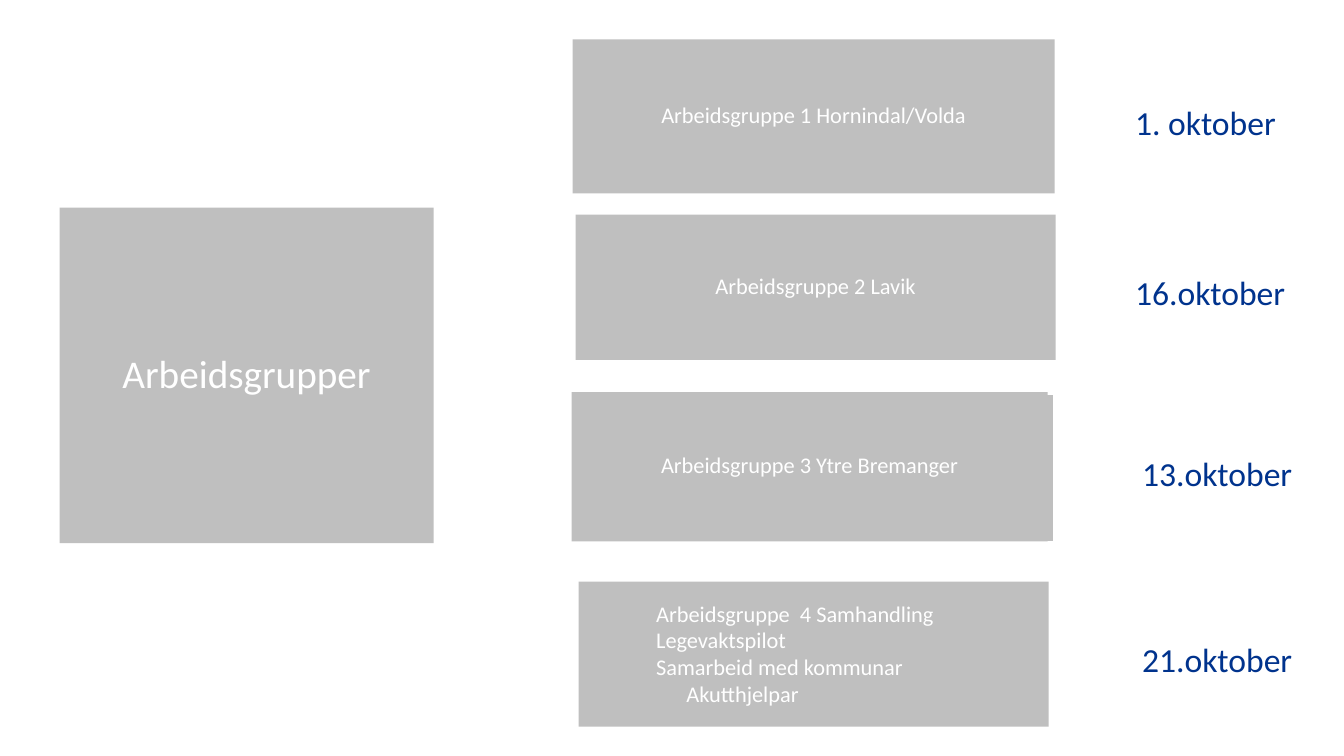
from dataclasses import dataclass

from pptx import Presentation, util as u
from pptx.enum import shapes, text
from pptx.dml.color import RGBColor

PX = 9144  # EMU in one px, 100 px to the inch
FONT = "Calibri"
COLORS = {"panel": "BFBFBF", "white": "FFFFFF", "date": "00338D"}


@dataclass(frozen=True)
class Box:
    left: int
    top: int
    width: int
    height: int

    def emu(self) -> tuple[int, ...]:
        return tuple(v * PX for v in (self.left, self.top, self.width, self.height))


@dataclass(frozen=True)
class Card:
    frame: Box
    label: str = ""
    shift: tuple[int, int] = (0, 0)  # offset of the labelled face from its frame


@dataclass(frozen=True)
class Date:
    box: Box
    label: str
    wrap: bool = False


TITLE_BOX = Box(59, 206, 371, 333)
CARDS = [
    Card(Box(568, 39, 478, 153), "Arbeidsgruppe 1 Hornindal/Volda"),
    Card(Box(571, 213, 476, 144), "Arbeidsgruppe 2 Lavik"),
    Card(Box(574, 390, 472, 148), "Arbeidsgruppe 3 Ytre Bremanger", (-7, -1)),
    Card(Box(574, 577, 466, 144)),
]
TOPICS_BOX = Box(641, 590, 324, 118)
TOPICS = [
    ("Arbeidsgruppe  4 Samhandling", 0),
    ("Legevaktspilot", 0),
    ("Samarbeid med kommunar", 0),
    ("Akutthjelpar", 30),
]
DATES = [
    Date(Box(1116, 96, 161, 50), "1. oktober"),
    Date(Box(1116, 265, 204, 50), "16.oktober", wrap=True),
    Date(Box(1123, 444, 170, 50), "13.oktober"),
    Date(Box(1123, 629, 170, 50), "21.oktober"),
]


def color(name: str) -> RGBColor:
    return RGBColor.from_string(COLORS[name])


def format_runs(paragraph, size: int, color_name: str) -> None:
    for run in paragraph.runs:
        run.font.name = FONT
        run.font.size = u.Pt(size)
        run.font.color.rgb = color(color_name)


def fill_panel(shape) -> None:
    shape.fill.solid()
    shape.fill.fore_color.rgb = color("panel")
    shape.line.fill.background()


def set_label(shape, label: str, size: int) -> None:
    frame = shape.text_frame
    frame.text = label
    frame.word_wrap = True
    frame.auto_size = text.MSO_AUTO_SIZE.NONE
    frame.vertical_anchor = text.MSO_ANCHOR.MIDDLE
    frame.margin_left = frame.margin_right = PX
    frame.margin_top = frame.margin_bottom = PX
    paragraph = frame.paragraphs[0]
    paragraph.alignment = text.PP_ALIGN.CENTER
    paragraph.line_spacing = 0.9
    format_runs(paragraph, size, "white")


def add_rectangle(parent, box: Box):
    shape = parent.add_shape(shapes.MSO_SHAPE.RECTANGLE, *box.emu())
    shape.shadow.inherit = False
    fill_panel(shape)
    return shape


def add_card(slide, card: Card) -> None:
    group = slide.shapes.add_group_shape()
    frame = add_rectangle(group.shapes, card.frame)
    frame.line.color.rgb = color("white")
    frame.line.width = u.Pt(2)
    across, down = card.shift
    face_box = Box(card.frame.left + across, card.frame.top + down,
                   card.frame.width, card.frame.height)
    face = add_rectangle(group.shapes, face_box)
    if card.label:
        set_label(face, card.label, 16)


def add_topics(slide) -> None:
    frame = slide.shapes.add_textbox(*TOPICS_BOX.emu()).text_frame
    frame.word_wrap = True
    frame.text = "\n".join(topic for topic, _ in TOPICS)
    for paragraph, (_, indent) in zip(frame.paragraphs, TOPICS):
        format_runs(paragraph, 16, "white")
        if indent:
            paragraph._p.get_or_add_pPr().set("marL", str(indent * PX))


def add_date(slide, date: Date) -> None:
    frame = slide.shapes.add_textbox(*date.box.emu()).text_frame
    frame.word_wrap = date.wrap
    frame.text = date.label
    format_runs(frame.paragraphs[0], 24, "date")


def main() -> None:
    presentation = Presentation()
    presentation.slide_width = 1333 * PX
    presentation.slide_height = 750 * PX
    slide = presentation.slides.add_slide(presentation.slide_layouts[5])

    # Title panel
    title = slide.shapes.title
    title.left, title.top, title.width, title.height = TITLE_BOX.emu()
    fill_panel(title)
    set_label(title, "Arbeidsgrupper", 28)

    # Working groups
    for card in CARDS:
        add_card(slide, card)
    add_topics(slide)

    # Meeting dates
    for date in DATES:
        add_date(slide, date)

    presentation.save("out.pptx")


if __name__ == "__main__":
    main()
